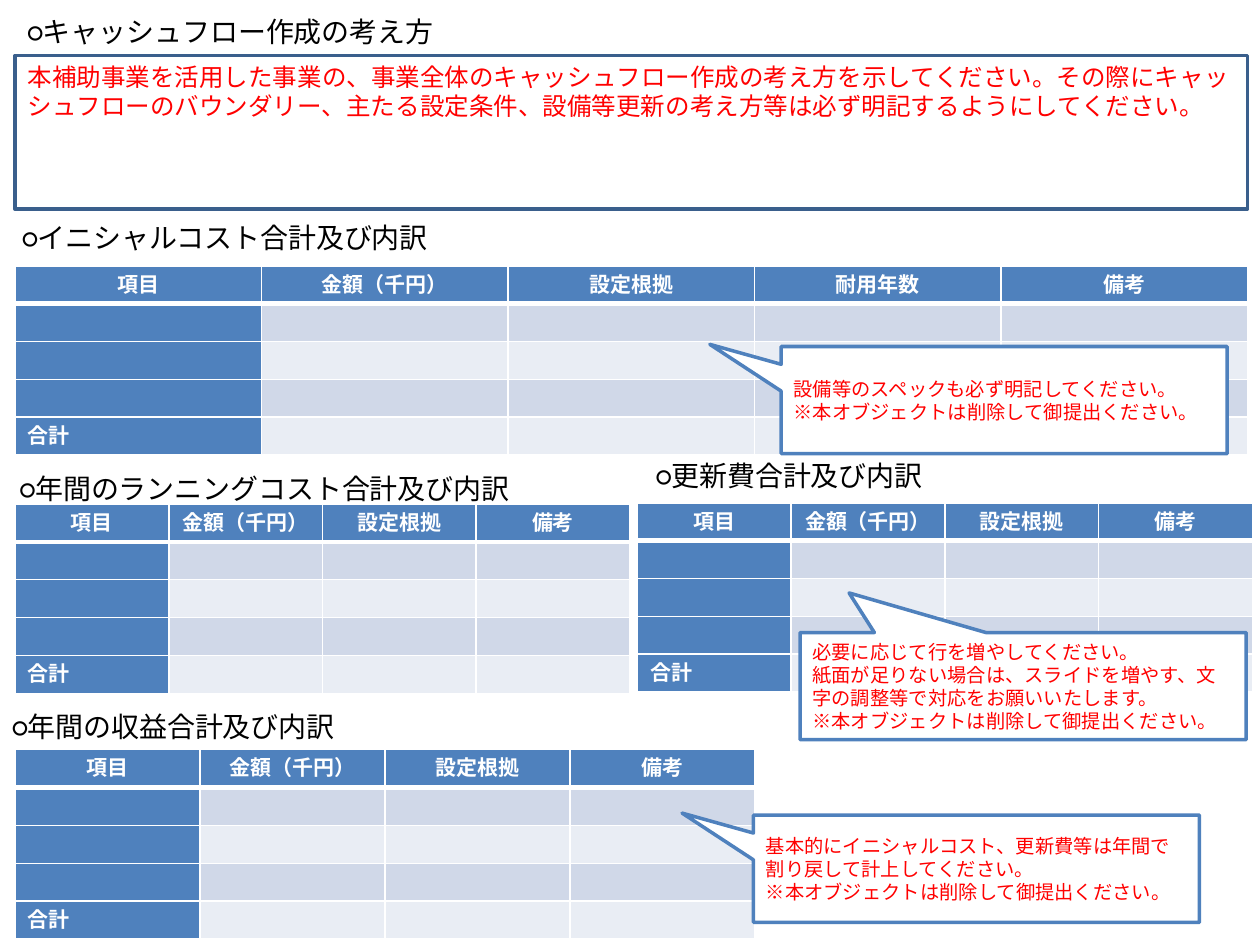
from dataclasses import dataclass

from lxml import etree
from pptx import Presentation
from pptx.dml.color import RGBColor
from pptx.enum import lang, shapes, text
from pptx.oxml.ns import qn
from pptx.util import Inches, Pt


@dataclass(frozen=True)
class Theme:
    blue: str = "4F81BD"
    dark_blue: str = "3A5F8C"
    band_dark: str = "D0D8E8"
    band_light: str = "E9EDF4"
    white: str = "FFFFFF"
    black: str = "000000"
    red: str = "FF0000"
    heading_size: int = 16
    body_size: int = 14
    table_size: int = 12
    note_size: int = 11
    line: int = 2
    border: int = 1
    header_border: int = 3
    font: str = "Noto Sans CJK JP"
    table_font: str = "Calibri"


T = Theme()
DELETE_NOTE = "※本オブジェクトは削除して御提出ください。"


def rgb(value):
    return RGBColor.from_string(value)


def format_text(tf, size, color, font=T.font, bold=False, align=text.PP_ALIGN.LEFT):
    for p in tf.paragraphs:
        p.alignment = align
        for r in p.runs:
            r.font.size = Pt(size)
            r.font.bold = bold
            r.font.name = font
            r.font.color.rgb = rgb(color)
            r.font.language_id = lang.MSO_LANGUAGE_ID.JAPANESE
            # East Asian typeface keeps the compact line height
            etree.SubElement(r._r.get_or_add_rPr(), qn("a:ea"), typeface=T.table_font)


def add_heading(s, x, y, w, words):
    sp = s.shapes.add_textbox(Inches(x), Inches(y), Inches(w), Inches(0.37))
    tf = sp.text_frame
    tf.word_wrap = True
    tf.text = words
    format_text(tf, T.heading_size, T.black)


def add_box(s, kind, x, y, w, h, line, words, size, anchor):
    sp = s.shapes.add_shape(kind, Inches(x), Inches(y), Inches(w), Inches(h))
    sp.shadow.inherit = False
    sp.line.color.rgb = rgb(line)
    sp.line.width = Pt(T.line)
    tf = sp.text_frame
    tf.word_wrap = True
    tf.vertical_anchor = anchor
    tf.text = words
    format_text(tf, size, T.red)
    return sp


def add_callout(s, x, y, tip, *lines):
    sp = add_box(s, shapes.MSO_SHAPE.RECTANGULAR_CALLOUT, x, y, 3.54, 0.85, T.blue,
                 "\n".join([*lines, DELETE_NOTE]), T.note_size, text.MSO_ANCHOR.MIDDLE)
    sp.fill.solid()
    sp.fill.fore_color.rgb = rgb(T.white)
    sp.adjustments[0], sp.adjustments[1] = tip


def set_borders(cell, row):
    widths = {"L": T.border, "R": T.border,
              "T": T.header_border if row == 1 else T.border,
              "B": T.header_border if row == 0 else T.border}
    tc_pr = cell._tc.get_or_add_tcPr()
    for side, width in widths.items():
        ln = etree.SubElement(tc_pr, qn(f"a:ln{side}"), w=str(Pt(width)))
        fill = etree.SubElement(ln, qn("a:solidFill"))
        etree.SubElement(fill, qn("a:srgbClr"), val=T.white)


def add_cost_table(s, x, y, w, headers):
    rows, cols = 5, len(headers)
    table = s.shapes.add_table(rows, cols, Inches(x), Inches(y),
                               Inches(w), Inches(0.3 * rows)).table
    table.first_col = True
    for row in range(rows):
        for col in range(cols):
            cell = table.cell(row, col)
            set_borders(cell, row)
            cell.fill.solid()
            if row == 0 or col == 0:
                color = T.blue
            else:
                color = T.band_dark if row % 2 else T.band_light
            cell.fill.fore_color.rgb = rgb(color)
            if row == 0:
                words, align = headers[col], text.PP_ALIGN.CENTER
            else:
                words = "合計" if row == rows - 1 and col == 0 else ""
                align = text.PP_ALIGN.LEFT
            if words:
                cell.text_frame.text = words
                format_text(cell.text_frame, T.table_size, T.white,
                            T.table_font, True, align)
            else:
                # Empty cells keep the table's type size
                etree.SubElement(cell.text_frame.paragraphs[0]._p,
                                 qn("a:endParaRPr"), sz=str(T.table_size * 100))


def main():
    prs = Presentation()
    prs.slide_width, prs.slide_height = Inches(10), Inches(7.5)
    s = prs.slides.add_slide(prs.slide_layouts[6])

    # Section headings
    for x, y, w, words in (
        (0.12, 0.07, 4.59, "○キャッシュフロー作成の考え方"),
        (0.08, 1.7, 4.59, "○イニシャルコスト合計及び内訳"),
        (0.06, 3.69, 4.59, "○年間のランニングコスト合計及び内訳"),
        (0, 5.58, 4.59, "○年間の収益合計及び内訳"),
        (5.11, 3.59, 2.86, "○更新費合計及び内訳"),
    ):
        add_heading(s, x, y, w, words)

    # Cash flow approach
    box = add_box(
        s, shapes.MSO_SHAPE.RECTANGLE, 0.12, 0.44, 9.78, 1.22, T.dark_blue,
        "本補助事業を活用した事業の、事業全体のキャッシュフロー作成の考え方を示してください。"
        "その際にキャッシュフローのバウンダリー、主たる設定条件、設備等更新の考え方等は"
        "必ず明記するようにしてください。", T.body_size, text.MSO_ANCHOR.TOP)
    box.fill.background()

    # Cost and revenue tables
    headers = ["項目", "金額（千円）", "設定根拠", "備考"]
    add_cost_table(s, 0.12, 2.11, 9.78, headers[:3] + ["耐用年数"] + headers[3:])
    add_cost_table(s, 0.12, 5.95, 5.87, headers)
    add_cost_table(s, 0.12, 4, 4.88, headers)
    add_cost_table(s, 5.06, 3.99, 4.88, headers)

    # Instruction callouts
    left_tip = (-0.66, -0.52)
    add_callout(s, 5.98, 6.47, left_tip,
                "基本的にイニシャルコスト、更新費等は年間で割り戻して計上してください。")
    add_callout(s, 6.2, 2.75, left_tip, "設備等のスペックも必ず明記してください。")
    add_callout(s, 6.35, 5.02, (-0.39, -0.87),
                "必要に応じて行を増やしてください。",
                "紙面が足りない場合は、スライドを増やす、文字の調整等で対応をお願いいたします。")

    prs.save("out.pptx")


if __name__ == "__main__":
    main()
